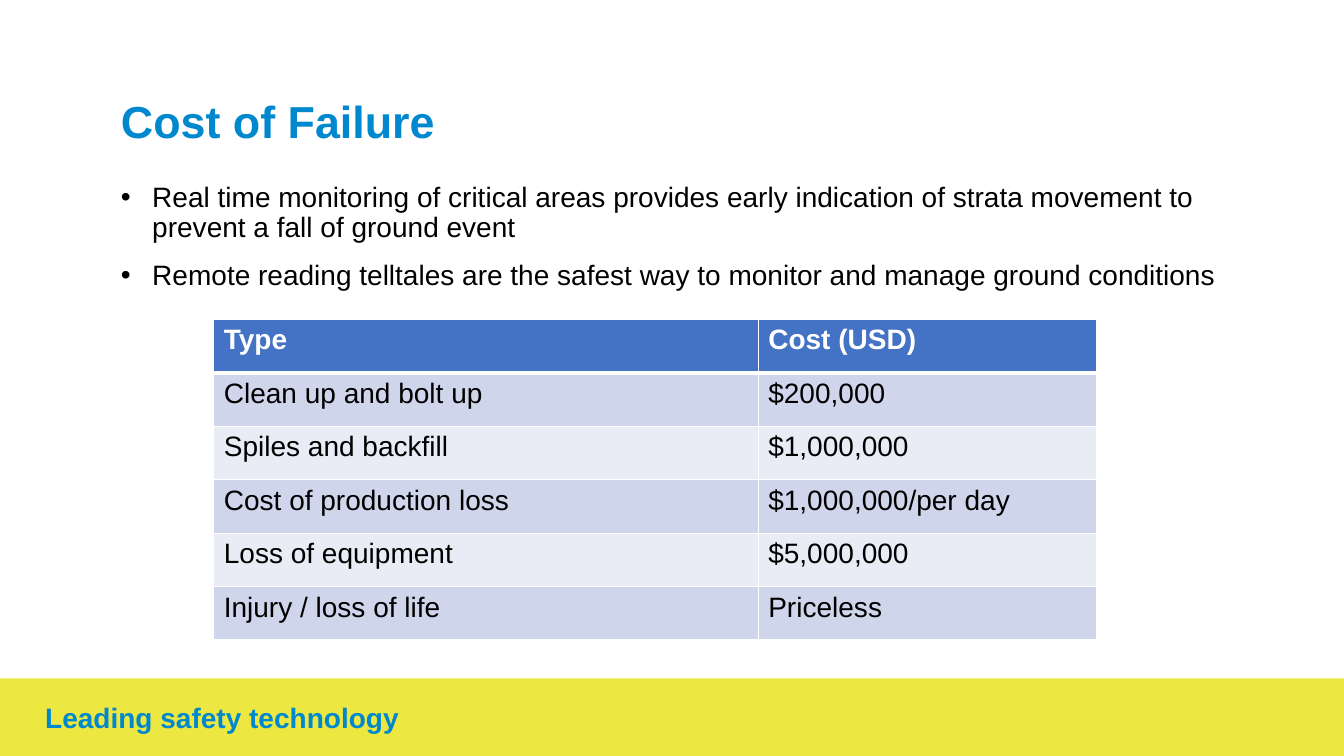
from lxml.etree import SubElement
from pptx import Presentation
from pptx.dml.color import RGBColor
from pptx.enum.shapes import MSO_SHAPE as Shape
from pptx.enum.text import MSO_ANCHOR as Anchor, MSO_AUTO_SIZE as Fit, PP_ALIGN as Align
from pptx.oxml.ns import qn
from pptx.util import Pt

SCALE = 9144  # EMU per px, 100 px to the inch
BLUE, LIME, BLACK, WHITE = "0088CE", "ECE741", "000000", "FFFFFF"
HEAD, BANDS = "4472C4", ("CFD5EA", "E9EBF5")


def px(n):
    return n * SCALE


def color(code):
    return RGBColor.from_string(code)


class Deck:
    def __init__(self, wide, high, face="Arial", size=20):
        self.prs = Presentation()
        self.prs.slide_width, self.prs.slide_height = px(wide), px(high)
        self.slide = self.prs.slides.add_slide(self.prs.slide_layouts[1])
        self.face, self.size = face, size

    def run(self, para, text, ink=BLACK, bold=False, size=None):
        run = para.add_run()
        run.text = text
        font = run.font
        font.name, font.size, font.bold = self.face, Pt(size or self.size), bold
        font.color.rgb = color(ink)

    def place(self, item, box):
        item.left, item.top, item.width, item.height = map(px, box)
        frame = item.text_frame
        frame.word_wrap, frame.auto_size = True, Fit.NONE
        return frame

    def title(self, text, box):
        frame = self.place(self.slide.shapes.title, box)
        frame.vertical_anchor = Anchor.MIDDLE
        para = frame.paragraphs[0]
        para.alignment, para.line_spacing = Align.LEFT, 0.9
        self.run(para, text, BLUE, True, 32)

    def bullets(self, items, box, indent=31):
        frame = self.place(self.slide.placeholders[1], box)
        frame.vertical_anchor = Anchor.TOP
        for i, text in enumerate(items):
            para = frame.add_paragraph() if i else frame.paragraphs[0]
            props = para._p.get_or_add_pPr()
            props.set("marL", str(px(indent)))
            props.set("indent", str(-px(indent)))
            SubElement(props, qn("a:buFont"), typeface=self.face)
            SubElement(props, qn("a:buChar"), char="•")
            para.line_spacing = 0.9
            para.space_before = Pt(12.3 if i else 0)
            self.run(para, text)

    def bar(self, box, fill):
        bar = self.slide.shapes.add_shape(Shape.RECTANGLE, *map(px, box))
        bar.shadow.inherit = False
        bar.fill.solid()
        bar.fill.fore_color.rgb = color(fill)
        bar.line.fill.background()

    def label(self, text, box, ink):
        item = self.slide.shapes.add_textbox(*map(px, box))
        self.run(self.place(item, box).paragraphs[0], text, ink, True)

    def border(self, cell, sides):
        props = cell._tc.get_or_add_tcPr()
        for i, (side, width) in enumerate(sides.items()):
            line = SubElement(props, qn(f"a:ln{side}"), w=str(Pt(width)))
            fill = SubElement(line, qn("a:solidFill"))
            SubElement(fill, qn("a:srgbClr"), val=WHITE)
            props.insert(i, line)

    def table(self, rows, box, widths):
        grid = self.slide.shapes.add_table(len(rows), len(widths), *map(px, box)).table
        for col, width in zip(grid.columns, widths):
            col.width = px(width)
        for r, row in enumerate(rows):
            head = r == 0
            for c, text in enumerate(row):
                cell = grid.cell(r, c)
                cell.fill.solid()
                cell.fill.fore_color.rgb = color(HEAD if head else BANDS[(r - 1) % 2])
                # A thick rule parts the header from the rows
                self.border(cell, {"L": 1, "R": 1, "T": 3 if r == 1 else 1, "B": 3 if head else 1})
                self.run(cell.text_frame.paragraphs[0], text, WHITE if head else BLACK, head)


def main():
    deck = Deck(1333, 750)

    # Footer band
    deck.bar((0, 673, 1333, 77), LIME)
    deck.label("Leading safety technology", (35, 690, 860, 44), BLUE)

    # Title and list
    deck.title("Cost of Failure", (110, 89, 1150, 67))
    deck.bullets([
        "Real time monitoring of critical areas provides early indication of strata movement "
        "to prevent a fall of ground event",
        "Remote reading telltales are the safest way to monitor and manage ground conditions",
    ], (110, 177, 1150, 119))

    # Cost table
    deck.table([
        ("Type", "Cost (USD)"),
        ("Clean up and bolt up", "$200,000"),
        ("Spiles and backfill", "$1,000,000"),
        ("Cost of production loss", "$1,000,000/per day"),
        ("Loss of equipment", "$5,000,000"),
        ("Injury / loss of life", "Priceless"),
    ], (212, 317, 876, 318), (540, 336))

    deck.prs.save("out.pptx")


if __name__ == "__main__":
    main()
